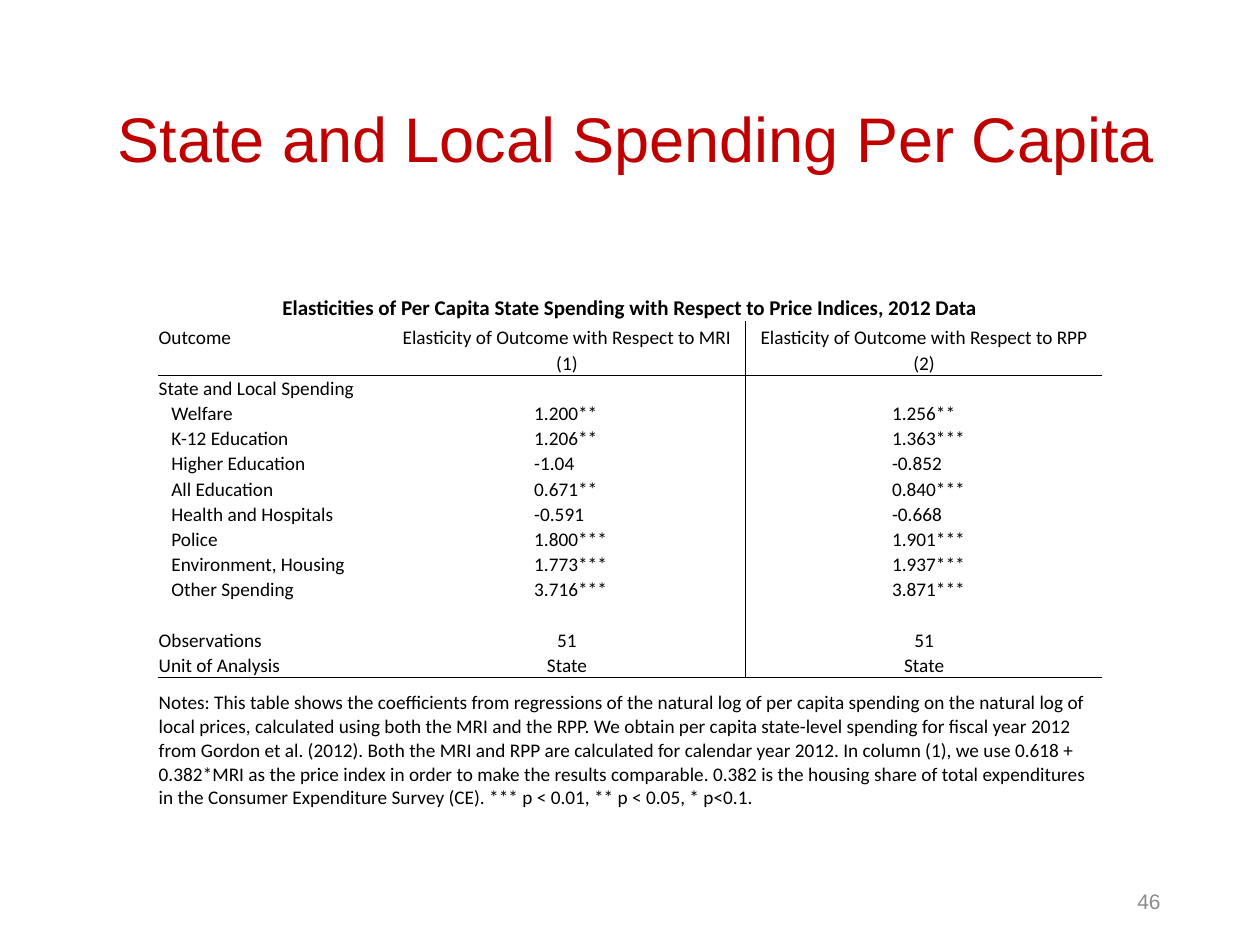
from dataclasses import dataclass

import lxml.etree
import pptx
import pptx.dml.color
import pptx.enum.text
import pptx.oxml.ns
import pptx.util

Inches = pptx.util.Inches
ALIGN = pptx.enum.text.PP_ALIGN
ANCHOR = pptx.enum.text.MSO_ANCHOR


@dataclass(frozen=True)
class Theme:
    title_color: str = "C00000"
    text_color: str = "000000"
    number_color: str = "8C8C8C"
    heading_font: str = "Arial"
    table_font: str = "Calibri"
    title_size: int = 36
    caption_size: int = 12
    table_size: int = 11
    number_size: int = 12
    rule_width: float = 0.5


THEME = Theme()

CAPTION = "Elasticities of Per Capita State Spending with Respect to Price Indices, 2012 Data"
HEADER_ROWS = [
    ("Outcome", "Elasticity of Outcome with Respect to MRI",
     "Elasticity of Outcome with Respect to RPP"),
    ("", "(1)", "(2)"),
    ("State and Local Spending", "", ""),
]
SPENDING_ROWS = [
    ("Welfare", "1.200**", "1.256**"),
    ("K-12 Education", "1.206**", "1.363***"),
    ("Higher Education", "-1.04", "-0.852"),
    ("All Education", "0.671**", "0.840***"),
    ("Health and Hospitals", "-0.591", "-0.668"),
    ("Police", "1.800***", "1.901***"),
    ("Environment, Housing", "1.773***", "1.937***"),
    ("Other Spending", "3.716***", "3.871***"),
]
SUMMARY_ROWS = [
    ("", "", ""),
    ("Observations", "51", "51"),
    ("Unit of Analysis", "State", "State"),
]
NOTES = (
    "Notes: This table shows the coefficients from regressions of the natural log of "
    "per capita spending on the natural log of local prices, calculated using both the "
    "MRI and the RPP. We obtain per capita state-level spending for fiscal year 2012 "
    "from Gordon et al. (2012). Both the MRI and RPP are calculated for calendar year "
    "2012. In column (1), we use 0.618 + 0.382*MRI as the price index in order to make "
    "the results comparable. 0.382 is the housing share of total expenditures in the "
    "Consumer Expenditure Survey (CE). *** p < 0.01, ** p < 0.05, * p<0.1."
)


def write_text(text_frame, text, *, size, font, color, align=ALIGN.LEFT,
               bold=False, line_spacing=None):
    paragraph = text_frame.paragraphs[0]
    paragraph.alignment = align
    if line_spacing:
        paragraph.line_spacing = line_spacing
    if not text:
        # An empty cell still needs a type size, or its row grows.
        lxml.etree.SubElement(paragraph._p, pptx.oxml.ns.qn("a:endParaRPr"),
                              sz=str(size * 100))
        return
    run = paragraph.add_run()
    run.text = text
    run.font.size = pptx.util.Pt(size)
    run.font.name = font
    run.font.bold = bold
    run.font.color.rgb = pptx.dml.color.RGBColor.from_string(color)


def add_text_box(slide, box, text, *, anchor, **text_format):
    text_frame = slide.shapes.add_textbox(*map(Inches, box)).text_frame
    text_frame.word_wrap = True
    text_frame.vertical_anchor = anchor
    write_text(text_frame, text, font=THEME.heading_font, **text_format)


def set_borders(cell, sides):
    """Rule the named sides (L, R, T, B) and clear the others."""
    properties = cell._tc.get_or_add_tcPr()
    qn = pptx.oxml.ns.qn
    for side in "LRTB":
        line = lxml.etree.SubElement(properties, qn(f"a:ln{side}"))
        if side in sides:
            line.set("w", str(pptx.util.Pt(THEME.rule_width)))
            fill = lxml.etree.SubElement(line, qn("a:solidFill"))
            lxml.etree.SubElement(fill, qn("a:srgbClr"), val=THEME.text_color)
        else:
            lxml.etree.SubElement(line, qn("a:noFill"))


def format_cell(cell, text, *, borders="", indent=0.01, size=THEME.table_size,
                **text_format):
    set_borders(cell, borders)
    cell.fill.background()
    cell.margin_left = Inches(indent)
    cell.margin_right = cell.margin_top = Inches(0.01)
    cell.margin_bottom = 0
    cell.vertical_anchor = ANCHOR.BOTTOM
    write_text(cell.text_frame, text, size=size, font=THEME.table_font,
               color=THEME.text_color, **text_format)


def add_elasticity_table(slide, box):
    body = HEADER_ROWS + SPENDING_ROWS + SUMMARY_ROWS
    notes_row = len(body) + 1
    ruled_rows = (2, len(body))
    row_heights = [0.22, 0.23] + [0.2] * (len(body) - 1) + [1.05]
    column_widths = [1.83, 2.84, 2.83]
    column_sides = ["", "R", "L"]

    table = slide.shapes.add_table(
        len(row_heights), len(column_widths), *map(Inches, box)).table
    table.first_row = table.horz_banding = False
    for column, width in zip(table.columns, column_widths):
        column.width = Inches(width)
    for row, height in zip(table.rows, row_heights):
        row.height = Inches(height)

    for row_index, values in enumerate(body, start=1):
        is_spending = values in SPENDING_ROWS
        for column_index, value in enumerate(values):
            borders = column_sides[column_index]
            if row_index in ruled_rows:
                borders += "B"
            if row_index - 1 in ruled_rows:
                borders += "T"
            is_label = column_index == 0
            indent = 0.01
            if is_spending:
                indent = 0.11 if is_label else 1.16
            align = ALIGN.LEFT if is_label or is_spending else ALIGN.CENTER
            format_cell(table.cell(row_index, column_index), value,
                        borders=borders, indent=indent, align=align)

    full_width_rows = [
        (0, CAPTION, dict(size=THEME.caption_size, bold=True, align=ALIGN.CENTER)),
        (notes_row, NOTES, dict(borders="T")),
    ]
    for row_index, text, cell_format in full_width_rows:
        first, *others = table.rows[row_index].cells
        first.merge(others[-1])
        format_cell(first, text, **cell_format)
        for cell in others:
            format_cell(cell, "", borders=cell_format.get("borders", ""))


def build_table_slide(presentation):
    slide = presentation.slides.add_slide(presentation.slide_layouts[6])
    add_text_box(slide, (7.06, 6.95, 2.25, 0.4), "46", anchor=ANCHOR.MIDDLE,
                 size=THEME.number_size, color=THEME.number_color, align=ALIGN.RIGHT)
    add_elasticity_table(slide, (1.25, 2.33, 7.5, 4.1))
    add_text_box(slide, (0.1, 0.36, 9.9, 1.09), "State and Local Spending Per Capita",
                 anchor=ANCHOR.BOTTOM, size=THEME.title_size, color=THEME.title_color,
                 align=ALIGN.CENTER, line_spacing=0.9)


def main():
    presentation = pptx.Presentation()
    presentation.slide_width = Inches(10)
    presentation.slide_height = Inches(7.5)
    build_table_slide(presentation)
    presentation.save("out.pptx")


if __name__ == "__main__":
    main()
